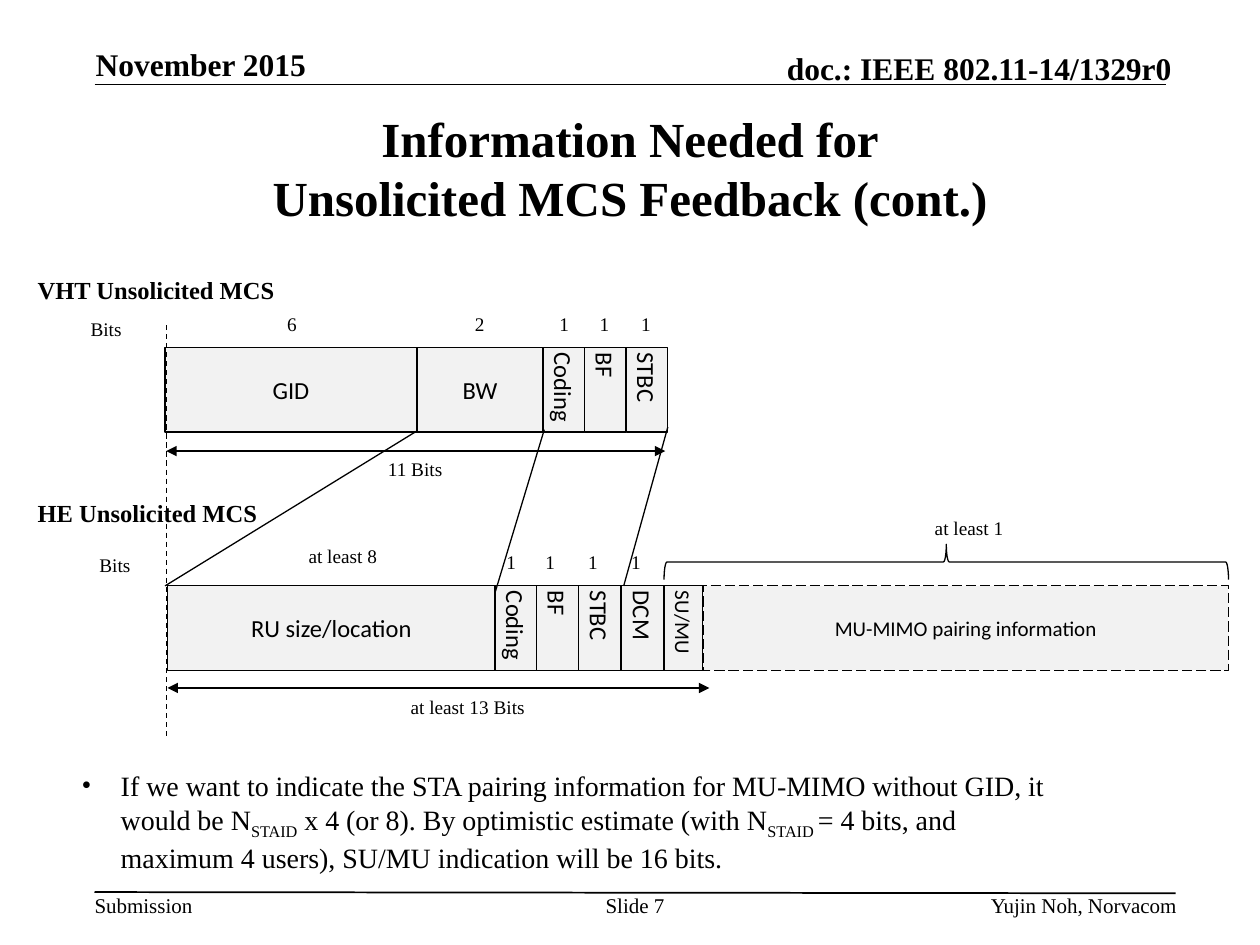
"""Build the slide comparing VHT and HE unsolicited MCS feedback fields."""
from dataclasses import dataclass
from typing import Optional

from lxml.etree import SubElement
from pptx import Presentation
from pptx.dml.color import RGBColor
from pptx.enum.dml import MSO_LINE as Dash
from pptx.enum.shapes import MSO_CONNECTOR as Connector, MSO_SHAPE as Preset
from pptx.enum.text import MSO_ANCHOR as Anchor, MSO_AUTO_SIZE as AutoSize, PP_ALIGN as Align
from pptx.oxml.ns import qn
from pptx.util import Inches, Pt


@dataclass(frozen=True)
class Theme:
    """Colours, fonts and type sizes of the slide."""
    ink: RGBColor = RGBColor(0, 0, 0)
    field_fill: RGBColor = RGBColor(0xF2, 0xF2, 0xF2)
    serif: str = "Times New Roman"
    sans: str = "Calibri"
    title: int = 28
    header: int = 18
    body: int = 16
    heading: int = 14
    field: int = 14
    small_field: int = 12
    footer: int = 12
    bits: int = 11
    rule: float = 1
    outline: float = 0.75


THEME = Theme()


@dataclass(frozen=True)
class Field:
    """One field of a frame, with its bit count above it."""
    name: str
    width: float
    bits: str = ""
    bits_left: float = 0
    vertical: bool = False
    size: int = THEME.field
    dash: Optional[Dash] = None


@dataclass(frozen=True)
class Frame:
    """A row of adjoining fields."""
    left: float
    top: float
    bits_top: float
    fields: tuple[Field, ...]


@dataclass(frozen=True)
class Label:
    """A text box; margin-free when it belongs to the header or footer."""
    text: str
    left: float
    top: float
    width: float
    height: float = 0.29
    size: int = THEME.bits
    bold: bool = False
    align: Align = Align.LEFT
    anchor: Anchor = Anchor.TOP
    margins: bool = True
    wrap: bool = False


@dataclass(frozen=True)
class Line:
    """A straight line between two points."""
    start: tuple[float, float]
    end: tuple[float, float]
    width: float = THEME.outline
    dash: Optional[Dash] = None
    arrows: bool = False


FIELD_HEIGHT = 0.67
VERTICAL_MARGIN = 0.04

FRAMES = (
    Frame(1.31, 2.76, 2.43, (
        Field("GID", 2, "6", 2.18),
        Field("BW", 1, "2", 3.67),
        Field("Coding", 0.33, "1", 4.34, vertical=True),
        Field("BF", 0.33, "1", 4.66, vertical=True),
        Field("STBC", 0.33, "1", 4.99, vertical=True),
    )),
    Frame(1.33, 4.65, 4.32, (
        Field("RU size/location", 2.6),
        Field("Coding", 0.33, "1", 3.92, vertical=True),
        Field("BF", 0.33, "1", 4.23, vertical=True),
        Field("STBC", 0.34, "1", 4.57, vertical=True),
        Field("DCM", 0.34, "1", 4.91, vertical=True),
        Field("SU/MU", 0.31, vertical=True, size=THEME.small_field),
        Field("MU-MIMO pairing information", 4.17, size=THEME.small_field, dash=Dash.LONG_DASH),
    )),
)

LABELS = (
    Label("November 2015", 0.76, 0.36, 2.05, 0.3, THEME.header, True,
          anchor=Anchor.BOTTOM, margins=False, wrap=True),
    Label("doc.: IEEE 802.11-14/1329r0", 5.47, 0.39, 3.83, 0.3, THEME.header, True,
          Align.RIGHT, Anchor.BOTTOM, margins=False, wrap=True),
    Label("Submission", 0.75, 7.08, 0.78, 0.2, THEME.footer, margins=False),
    Label("Slide 7", 4.75, 7.08, 0.58, 0.2, THEME.footer, align=Align.CENTER, margins=False),
    Label("Yujin Noh, Norvacom", 5.86, 7.08, 3.48, 0.2, THEME.footer,
          align=Align.RIGHT, margins=False, wrap=True),
    Label("VHT Unsolicited MCS", 0.2, 2.13, 2.08, 0.34, THEME.heading, True, wrap=True),
    Label("HE Unsolicited MCS", 0.2, 3.9, 2.08, 0.34, THEME.heading, True, wrap=True),
    Label("Bits", 0.62, 2.47, 0.45),
    Label("Bits", 0.69, 4.34, 0.45),
    Label("11 Bits", 2.98, 3.58, 0.64),
    Label("at least 8", 2.35, 4.27, 0.75),
    Label("at least 1", 7.32, 4.05, 0.75),
    Label("at least 13 Bits", 3.16, 5.47, 1.12),
)

LINES = (
    Line((0.75, 0.67), (9.25, 0.67), THEME.rule),
    Line((0.75, 7.08), (9.33, 7.09), THEME.rule),
    Line((1.32, 3.58), (5.28, 3.58), arrows=True),
    Line((1.33, 5.46), (5.63, 5.46), arrows=True),
    Line((1.32, 2.58), (1.32, 5.87), dash=Dash.DASH),
    Line((3.31, 3.42), (1.31, 4.65)),
    Line((4.32, 3.41), (3.93, 4.7)),
    Line((5.3, 3.39), (4.95, 4.65)),
)

NOTE_RUNS = (
    ("If we want to indicate the STA pairing information for MU-MIMO without GID, it would be N", False),
    ("STAID", True),
    (" x 4 (or 8). By optimistic estimate (with N", False),
    ("STAID ", True),
    ("= 4 bits, and maximum 4 users), SU/MU indication will be 16 bits.", False),
)


def add_run(paragraph, text: str, size: int, bold: bool = False, face: str = THEME.serif):
    """Append a formatted run and return it."""
    run = paragraph.add_run()
    run.text = text
    run.font.name, run.font.size, run.font.bold = face, Pt(size), bold
    run.font.color.rgb = THEME.ink
    return run


def set_margins(frame, margin: float) -> None:
    """Give a text frame the same margin on all sides."""
    frame.margin_left = frame.margin_top = frame.margin_right = frame.margin_bottom = Inches(margin)


def add_label(slide, label: Label) -> None:
    """Draw a one-line text box."""
    box = slide.shapes.add_textbox(*map(Inches, (label.left, label.top, label.width, label.height)))
    frame = box.text_frame
    frame.word_wrap = label.wrap
    frame.vertical_anchor = label.anchor
    if not label.margins:
        set_margins(frame, 0)
    paragraph = frame.paragraphs[0]
    paragraph.alignment = label.align
    add_run(paragraph, label.text, label.size, label.bold)


def style_outline(line, width: float, dash: Optional[Dash] = None) -> None:
    """Set colour, width and dash of a line."""
    line.color.rgb = THEME.ink
    line.width = Pt(width)
    if dash is not None:
        line.dash_style = dash


def add_field(slide, field: Field, left: float, top: float) -> None:
    """Draw one field box with its name."""
    box = slide.shapes.add_shape(
        Preset.RECTANGLE, *map(Inches, (left, top, field.width, FIELD_HEIGHT)))
    box.shadow.inherit = False
    box.fill.solid()
    box.fill.fore_color.rgb = THEME.field_fill
    style_outline(box.line, THEME.outline, field.dash)
    frame = box.text_frame
    frame.word_wrap = True
    frame.vertical_anchor = Anchor.MIDDLE
    if field.vertical:
        frame._txBody.bodyPr.set("vert", "eaVert")
        set_margins(frame, VERTICAL_MARGIN)
    paragraph = frame.paragraphs[0]
    paragraph.alignment = Align.CENTER
    add_run(paragraph, field.name, field.size, face=THEME.sans)


def add_frame(slide, frame: Frame) -> None:
    """Draw the fields of a frame side by side, with their bit counts."""
    left = frame.left
    for field in frame.fields:
        add_field(slide, field, left, frame.top)
        if field.bits:
            add_label(slide, Label(field.bits, field.bits_left, frame.bits_top, 0.28))
        left += field.width


def add_line(slide, line: Line) -> None:
    """Draw a straight line, with arrowheads at both ends if asked."""
    connector = slide.shapes.add_connector(
        Connector.STRAIGHT, *map(Inches, (*line.start, *line.end)))
    style_outline(connector.line, line.width, line.dash)
    if line.arrows:
        for end in ("a:headEnd", "a:tailEnd"):
            SubElement(connector.line._get_or_add_ln(), qn(end), type="triangle")
    SubElement(connector._element.spPr, qn("a:effectLst"))


def add_brace(slide) -> None:
    """Draw the brace over the pairing information."""
    brace = slide.shapes.add_shape(Preset.LEFT_BRACE, *map(Inches, (7.37, 2.22, 0.28, 4.48)))
    brace.rotation = 90
    brace.shadow.inherit = False
    brace.fill.background()
    style_outline(brace.line, THEME.outline)


def add_note(slide) -> None:
    """Write the bulleted remark with its subscripts."""
    box = slide.shapes.add_textbox(*map(Inches, (0.55, 6.05, 7.95, 0.91)))
    box.text_frame.word_wrap = True
    paragraph = box.text_frame.paragraphs[0]
    properties = paragraph._p.get_or_add_pPr()
    properties.set("marL", str(Inches(0.31)))
    properties.set("indent", str(Inches(-0.31)))
    bullet_color = SubElement(properties, qn("a:buClr"))
    SubElement(bullet_color, qn("a:srgbClr"), val=str(THEME.ink))
    SubElement(properties, qn("a:buFont"), typeface=THEME.serif)
    SubElement(properties, qn("a:buChar"), char="•")
    for text, subscript in NOTE_RUNS:
        run = add_run(paragraph, text, THEME.body)
        if subscript:
            run.font._element.set("baseline", "-25000")


def set_title(slide, *lines: str) -> None:
    """Place and fill the title placeholder."""
    title = slide.shapes.title
    title.left, title.top, title.width, title.height = map(Inches, (0.75, 0.75, 8.5, 1.16))
    title.text_frame.auto_size = AutoSize.NONE
    title.text_frame.vertical_anchor = Anchor.MIDDLE
    paragraph = title.text_frame.paragraphs[0]
    paragraph.alignment = Align.CENTER
    for index, text in enumerate(lines):
        if index:
            paragraph.add_line_break()
        add_run(paragraph, text, THEME.title, True)


def main() -> None:
    """Build and save the presentation."""
    deck = Presentation()
    deck.slide_width, deck.slide_height = Inches(10), Inches(7.5)
    slide = deck.slides.add_slide(deck.slide_layouts[5])
    set_title(slide, "Information Needed for", "Unsolicited MCS Feedback (cont.)")
    for frame in FRAMES:
        add_frame(slide, frame)
    for label in LABELS:
        add_label(slide, label)
    add_note(slide)
    add_brace(slide)
    for line in LINES:
        add_line(slide, line)
    deck.save("out.pptx")


if __name__ == "__main__":
    main()
